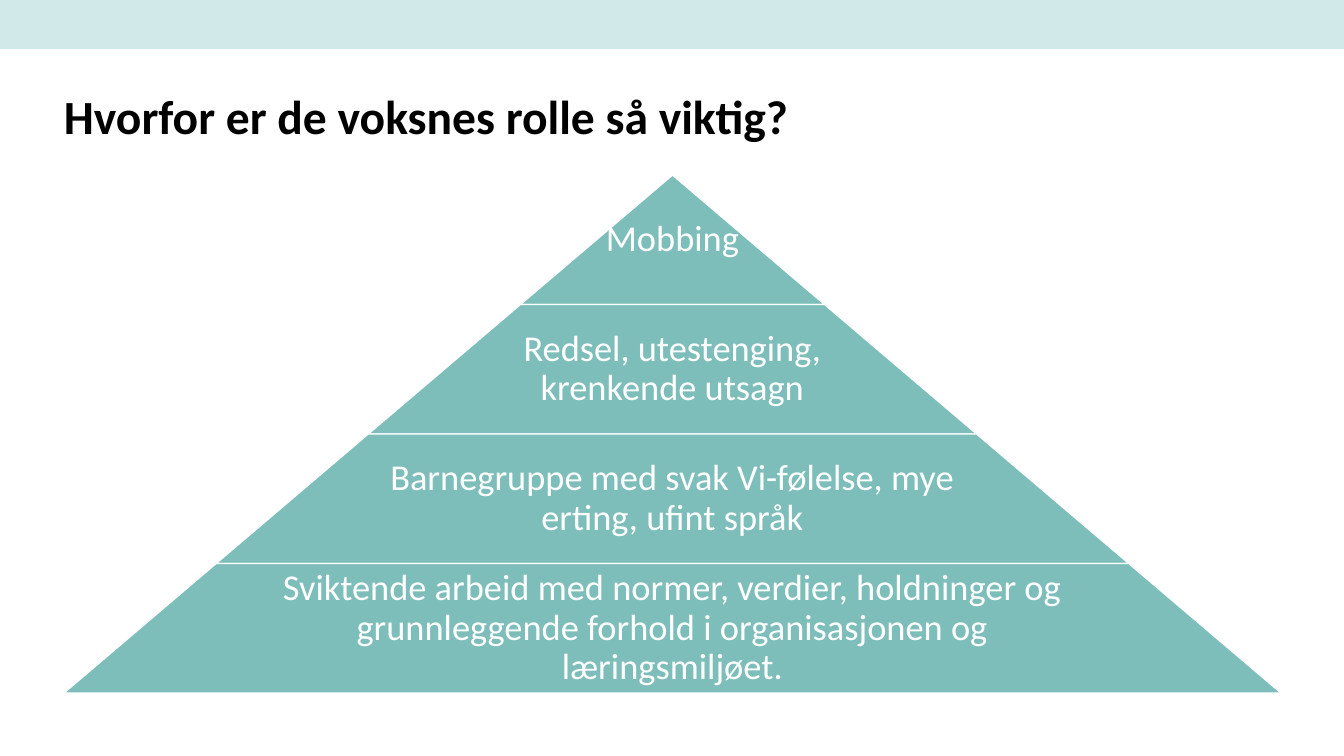
from dataclasses import dataclass

from pptx import Presentation
from pptx import util as u
from pptx.dml.color import RGBColor
from pptx.enum import shapes, text

PX = 914400 / 100.8


@dataclass(frozen=True)
class Theme:
    """Colours, font and type sizes."""
    font: str = "Calibri"
    band: str = "D1EAE9"
    tier: str = "7DBEBA"
    ink: str = "000000"
    paper: str = "FFFFFF"
    head: int = 34
    body: int = 26


T = Theme()
TIERS = [
    ("Mobbing", 1),
    ("Redsel, utestenging, krenkende utsagn", 0.65),
    ("Barnegruppe med svak Vi-følelse, mye erting, ufint språk", 0.65),
    ("Sviktende arbeid med normer, verdier, holdninger og grunnleggende "
     "forhold i organisasjonen og læringsmiljøet.", 0.65),
]


def px(*vals):
    """Turn pixels into EMU."""
    return [u.Emu(round(v * PX)) for v in vals]


def style(obj, **vals):
    """Set each named value on an object."""
    for key, val in vals.items():
        setattr(obj, key, val)


def block(slide, kind, box, fill, line=None):
    """Draw a filled preset shape in the box."""
    shape = slide.shapes.add_shape(kind, *px(*box))
    shape.shadow.inherit = False
    shape.fill.solid()
    shape.fill.fore_color.rgb = RGBColor.from_string(fill)
    if line:
        shape.line.color.rgb = RGBColor.from_string(line)
        shape.line.width = u.Pt(1)
    else:
        shape.line.fill.background()
    return shape


def label(slide, box, words, size, ink, pad=0, bold=False,
          align=text.PP_ALIGN.LEFT, anchor=text.MSO_ANCHOR.TOP, space=1.0):
    """Write one paragraph in the box."""
    frame = slide.shapes.add_textbox(*px(*box)).text_frame
    inset = px(pad)[0]
    style(frame, word_wrap=True, vertical_anchor=anchor, margin_left=inset,
          margin_right=inset, margin_top=inset, margin_bottom=inset)
    para = frame.paragraphs[0]
    style(para, alignment=align, line_spacing=space)
    run = para.add_run()
    run.text = words
    style(run.font, name=T.font, size=u.Pt(size), bold=bold)
    run.font.color.rgb = RGBColor.from_string(ink)


def pyramid(slide, box, tiers):
    """Stack equal tiers that widen from the apex to the full box."""
    left, top, width, height = box
    count = len(tiers)
    high = height / count
    for row, (words, share) in enumerate(tiers):
        wide = width * (row + 1) / count
        y = top + row * high
        mid = left + width / 2
        part = block(slide, shapes.MSO_SHAPE.TRAPEZOID,
                     (mid - wide / 2, y, wide, high), T.tier, T.paper)
        part.adjustments[0] = width / count / 2 / high
        room = wide * share
        label(slide, (mid - room / 2, y, room, high), words, T.body, T.paper,
              pad=4, align=text.PP_ALIGN.CENTER,
              anchor=text.MSO_ANCHOR.MIDDLE, space=0.9)


def main():
    """Build and save the slide."""
    deck = Presentation()
    deck.slide_width, deck.slide_height = px(1344, 756)
    slide = deck.slides.add_slide(deck.slide_layouts[6])
    block(slide, shapes.MSO_SHAPE.RECTANGLE, (0, 0, 1344, 49), T.band)
    label(slide, (64, 87, 1217, 57), "Hvorfor er de voksnes rolle så viktig?",
          T.head, T.ink, bold=True)
    pyramid(slide, (64, 175, 1217, 518), TIERS)
    deck.save("out.pptx")


if __name__ == "__main__":
    main()
